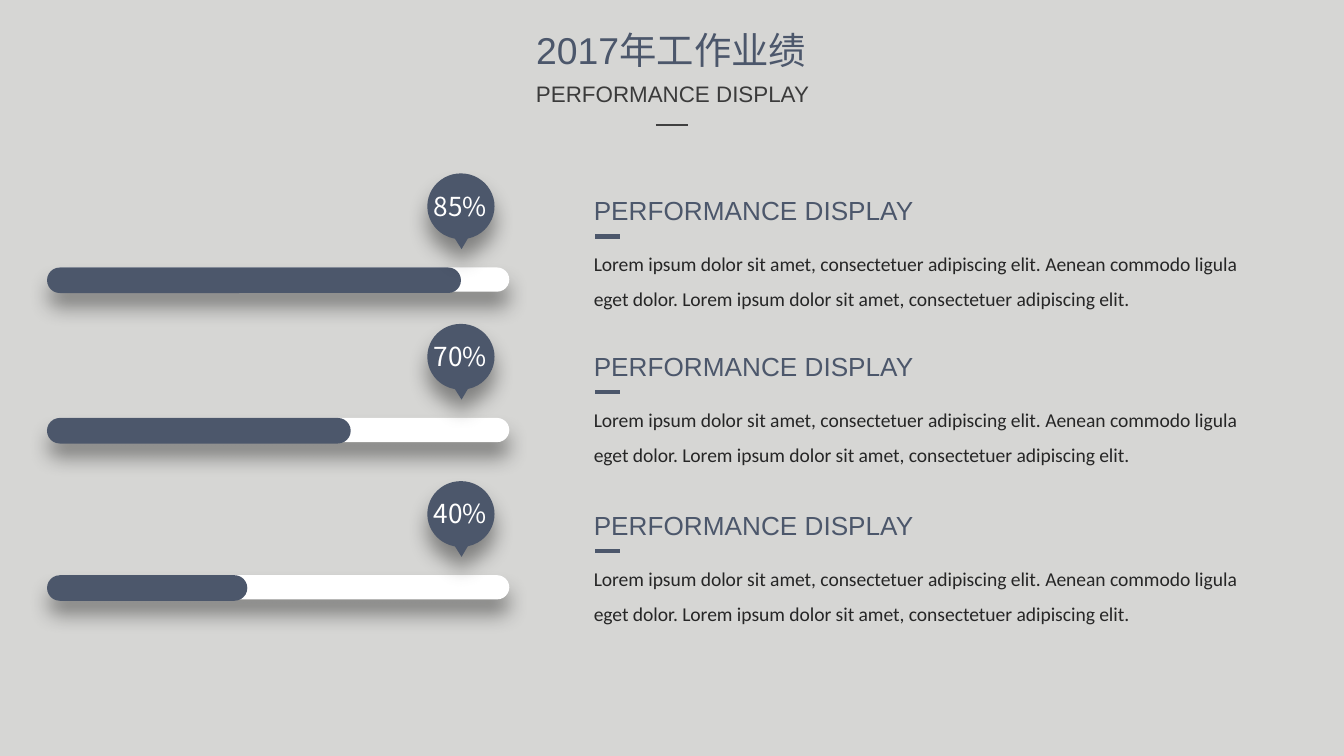
from lxml import etree
from pptx import Presentation
from pptx.dml.color import RGBColor
from pptx.enum.shapes import MSO_CONNECTOR, MSO_SHAPE
from pptx.enum.text import MSO_ANCHOR, MSO_AUTO_SIZE, PP_ALIGN
from pptx.oxml import parse_xml
from pptx.oxml.ns import nsdecls, qn
from pptx.util import Inches, Pt

SLATE = RGBColor(0x4C, 0x57, 0x6B)
WHITE = RGBColor(0xFF, 0xFF, 0xFF)
BACKGROUND = RGBColor(0xD6, 0xD6, 0xD4)
RULE = RGBColor(0x40, 0x40, 0x40)
SUBTITLE = RGBColor(0x3B, 0x3B, 0x3B)
BODY = RGBColor(0x26, 0x26, 0x26)

SOFT_SHADOW = (
    f'<a:effectLst {nsdecls("a")}>'
    f'<a:outerShdw blurRad="{Pt(11)}" dist="{Pt(8)}" dir="5400000" algn="t" rotWithShape="0">'
    '<a:srgbClr val="000000"><a:alpha val="40000"/></a:srgbClr>'
    '</a:outerShdw></a:effectLst>'
)

HEADING = "PERFORMANCE DISPLAY"
LOREM = (
    "Lorem ipsum dolor sit amet, consectetuer adipiscing elit. Aenean commodo ligula "
    "eget dolor. Lorem ipsum dolor sit amet, consectetuer adipiscing elit."
)

# label, width of the filled bar, top of the pin, top of the heading
ROWS = [
    ("85%", 3.08, 1.29, 1.40),
    ("70%", 2.26, 2.41, 2.56),
    ("40%", 1.49, 3.58, 3.74),
]


def write(box, text, size, color, font="Arial", align=PP_ALIGN.LEFT):
    """Put one formatted paragraph into a box and return the paragraph."""
    frame = box.text_frame
    frame.word_wrap = True
    frame.auto_size = MSO_AUTO_SIZE.SHAPE_TO_FIT_TEXT
    frame.vertical_anchor = MSO_ANCHOR.TOP
    para = frame.paragraphs[0]
    para.text = text
    para.alignment = align
    para.font.size = Pt(size)
    para.font.name = font
    para.font.color.rgb = color
    return para


def add_solid(shapes, kind, left, top, width, height, color, shadow=False):
    """Add a filled shape without outline, with a soft shadow if asked."""
    shape = shapes.add_shape(kind, Inches(left), Inches(top), Inches(width), Inches(height))
    shape.fill.solid()
    shape.fill.fore_color.rgb = color
    shape.line.fill.background()
    shape.shadow.inherit = False
    if shadow:
        properties = shape._element.spPr
        properties.replace(properties.find(qn("a:effectLst")), parse_xml(SOFT_SHADOW))
    return shape


deck = Presentation()
deck.slide_width = Inches(10)
deck.slide_height = Inches(10 * 9 / 16)
page = deck.slides.add_slide(deck.slide_layouts[5])
page.background.fill.solid()
page.background.fill.fore_color.rgb = BACKGROUND

# Title and subtitle
title = page.shapes.title
title.left, title.top = Inches(3.82), Inches(0.15)
title.width, title.height = Inches(2.35), Inches(0.44)
write(title, "2017年工作业绩", 20, SLATE, align=PP_ALIGN.CENTER)
subtitle = page.shapes.add_textbox(Inches(3.26), Inches(0.55), Inches(3.49), Inches(0.3))
write(subtitle, HEADING, 12, SUBTITLE, align=PP_ALIGN.CENTER)

# Progress bars, pins and descriptions
for label, filled, pin_top, text_top in ROWS:
    bar = page.shapes.add_group_shape().shapes
    bar_top = pin_top + 0.7
    track = add_solid(bar, MSO_SHAPE.ROUNDED_RECTANGLE, 0.36, bar_top, 3.43, 0.18, WHITE, True)
    progress = add_solid(bar, MSO_SHAPE.ROUNDED_RECTANGLE, 0.35, bar_top, filled, 0.19, SLATE)
    for part in (track, progress):
        part.adjustments[0] = 0.5

    pin = page.shapes.add_group_shape().shapes
    bubble = add_solid(pin, MSO_SHAPE.OVAL_CALLOUT, 3.18, pin_top, 0.5, 0.49, SLATE, True)
    bubble.adjustments[0] = 0.01
    bubble.adjustments[1] = 0.65
    percent = pin.add_textbox(Inches(3.11), Inches(pin_top + 0.04), Inches(0.63), Inches(0.4))
    write(percent, label, 14, WHITE, "Noto Sans CJK SC", PP_ALIGN.CENTER)
    percent.text_frame.auto_size = MSO_AUTO_SIZE.NONE
    percent.text_frame.vertical_anchor = MSO_ANCHOR.MIDDLE

    heading = page.shapes.add_textbox(Inches(4.32), Inches(text_top), Inches(2.74), Inches(0.34))
    write(heading, HEADING, 14, SLATE)
    body = page.shapes.add_textbox(Inches(4.32), Inches(text_top + 0.34), Inches(5), Inches(0.63))
    write(body, LOREM, 10.5, BODY, "Calibri").line_spacing = 1.5

# Short rules under the subtitle and the headings
rules = [(4.88, 5.12, 0.93, RULE, 1.5)]
rules += [(4.43, 4.61, text_top + 0.36, SLATE, 2.25) for *_, text_top in ROWS]
for start, end, y, color, weight in rules:
    rule = page.shapes.add_connector(
        MSO_CONNECTOR.STRAIGHT, Inches(start), Inches(y), Inches(end), Inches(y)
    )
    rule.line.color.rgb = color
    rule.line.width = Pt(weight)
    etree.SubElement(rule._element.spPr, qn("a:effectLst"))

deck.save("out.pptx")
